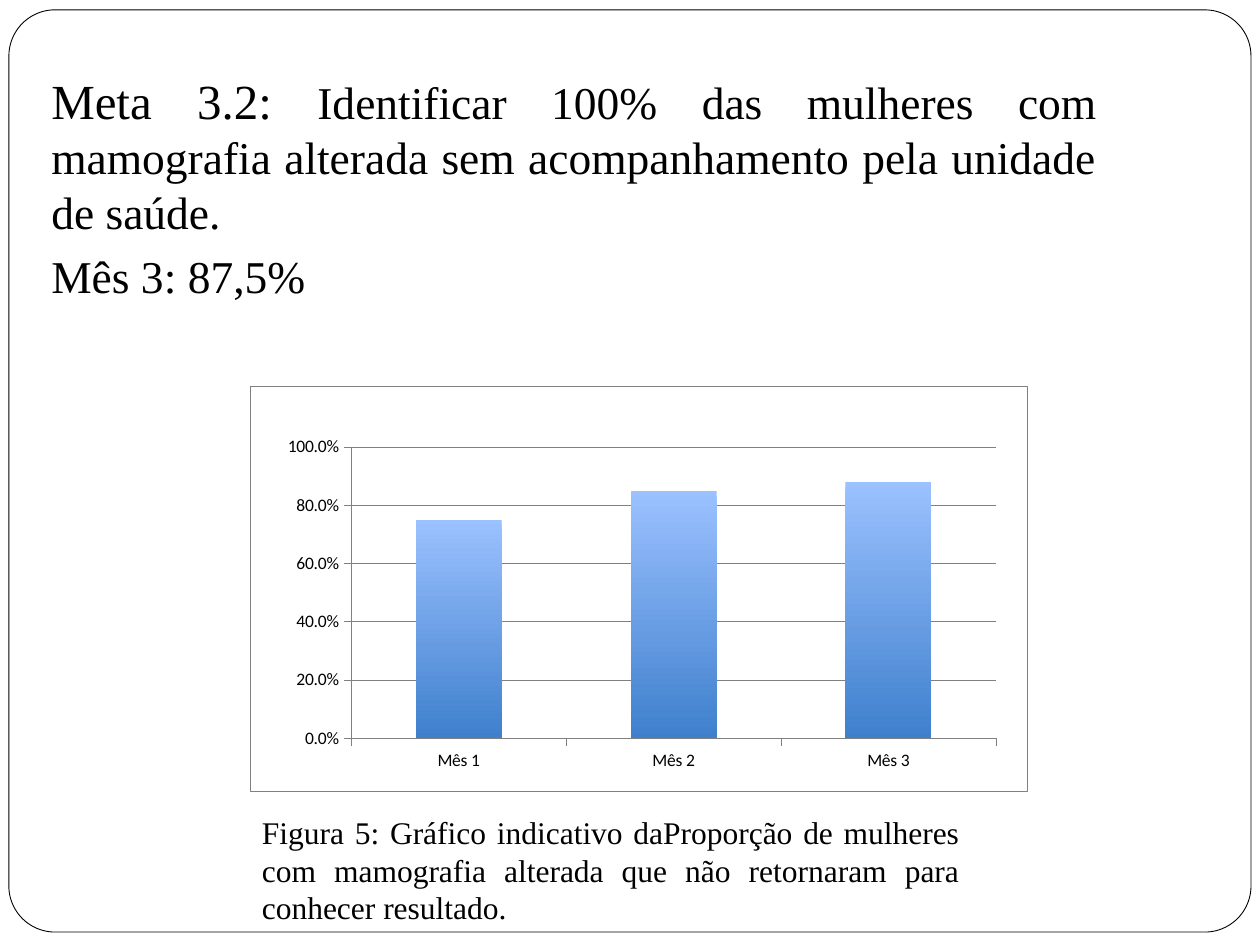
from lxml import etree
from pptx import Presentation
from pptx import util as u
from pptx.chart.data import CategoryChartData
from pptx.dml.color import RGBColor
from pptx.enum import chart as charts, shapes, text
from pptx.oxml import parse_xml
from pptx.oxml.ns import nsdecls, qn

SERIF = "Times New Roman"
BLACK, WHITE, GRAY = "000000", "FFFFFF", "808080"


def color(value):
    """Turn a hex string into a colour."""
    return RGBColor.from_string(value)


def place(box, left, top, width, height):
    """Set position and size in centimetres."""
    box.left, box.top = u.Cm(left), u.Cm(top)
    box.width, box.height = u.Cm(width), u.Cm(height)


def style_line(line, value, width):
    """Give a line its colour and width in points."""
    line.color.rgb = color(value)
    line.width = u.Pt(width)


def add_span(para, words, size, font=SERIF, value=BLACK):
    """Append a formatted run to a paragraph."""
    span = para.add_run()
    span.text = words
    span.font.size = u.Pt(size)
    span.font.name = font
    span.font.color.rgb = color(value)


def justify(para, before=0):
    """Justify a paragraph without bullet or indent."""
    para.alignment = text.PP_ALIGN.JUSTIFY
    para.space_before = u.Pt(before)
    properties = para._p.get_or_add_pPr()
    properties.set("marL", "0")
    properties.set("indent", "0")
    etree.SubElement(properties, qn("a:buNone"))


def add_frame(page, body):
    """Draw the rounded page frame behind the body."""
    frame = page.shapes.add_shape(shapes.MSO_SHAPE.ROUNDED_RECTANGLE, 0, 0, 0, 0)
    place(frame, 0.18, 0.2, 25.04, 18.59)
    frame.adjustments[0] = 0.05
    frame.shadow.inherit = False
    frame.fill.solid()
    frame.fill.fore_color.rgb = color(WHITE)
    style_line(frame.line, BLACK, 0.5)
    body.element.addprevious(frame.element)


def fill_body(body):
    """Write the goal and its result in the body placeholder."""
    place(body, 0.78, 1.29, 21.6, 12.7)
    goal = body.text_frame.paragraphs[0]
    add_span(goal, "Meta 3.2: ", 28)
    add_span(goal, "Identificar 100% das mulheres com mamografia alterada "
             "sem acompanhamento pela unidade de saúde. ", 26)
    result = body.text_frame.add_paragraph()
    add_span(result, "Mês 3: 87,5%", 26)
    for para in (goal, result):
        justify(para, before=5.8)


def add_caption(page, words):
    """Add the figure caption."""
    box = page.shapes.add_textbox(0, 0, 0, 0)
    place(box, 5.03, 16.26, 14.57, 2.57)
    box.text_frame.word_wrap = True
    para = box.text_frame.paragraphs[0]
    add_span(para, words, 18)
    justify(para)


def area_format(border=None):
    """Return white area properties with an optional hairline border."""
    line = (f'<a:ln w="3175"><a:solidFill><a:srgbClr val="{border}"/></a:solidFill></a:ln>'
            if border else "<a:ln><a:noFill/></a:ln>")
    return parse_xml(f'<c:spPr {nsdecls("c", "a")}><a:solidFill><a:srgbClr val="{WHITE}"/>'
                     f'</a:solidFill>{line}</c:spPr>')


def set_plot_layout(area, **sizes):
    """Fix the inner plot area as fractions of the chart."""
    for old in area.findall(qn("c:layout")):
        area.remove(old)
    values = "".join(f'<c:{key} val="{value}"/>' for key, value in sizes.items())
    area.insert(0, parse_xml(
        f'<c:layout {nsdecls("c")}><c:manualLayout><c:layoutTarget val="inner"/>'
        f'<c:xMode val="edge"/><c:yMode val="edge"/>{values}</c:manualLayout></c:layout>'))


def style_axes(chart):
    """Format both axes and the gridlines."""
    for axis in (chart.category_axis, chart.value_axis):
        axis.major_tick_mark = charts.XL_TICK_MARK.OUTSIDE
        axis.minor_tick_mark = charts.XL_TICK_MARK.NONE
        style_line(axis.format.line, GRAY, 0.25)
    scale = chart.value_axis
    scale.minimum_scale, scale.maximum_scale, scale.major_unit = 0, 1, 0.2
    scale.has_major_gridlines = True
    style_line(scale.major_gridlines.format.line, GRAY, 0.25)
    scale.tick_labels.number_format = "0.0%"
    scale.tick_labels.number_format_is_linked = False


def add_column_chart(page, categories, values):
    """Add the monthly column chart."""
    data = CategoryChartData(number_format="0.0%")
    data.categories = categories
    data.add_series("Series 1", values)
    holder = page.shapes.add_chart(charts.XL_CHART_TYPE.COLUMN_CLUSTERED,
                                   u.Cm(5.04), u.Cm(7.78), u.Cm(15.67), u.Cm(8.17), data)
    chart = holder.chart
    chart.has_title = chart.has_legend = False
    chart.font.name, chart.font.size = "Calibri", u.Pt(10)
    chart.font.color.rgb = color(BLACK)
    style_axes(chart)
    plot = chart.plots[0]
    plot.gap_width, plot.vary_by_categories = 150, False
    fill = plot.series[0].format.fill
    fill.gradient()
    fill.gradient_angle = 270
    for stop, value in zip(fill.gradient_stops, ("9BC1FF", "3F80CD")):
        stop.color.rgb = color(value)
    root = chart.element.find(qn("c:chart"))
    area = root.find(qn("c:plotArea"))
    set_plot_layout(area, x=0.13, y=0.15, w=0.83, h=0.72)
    area.append(area_format())
    root.addnext(area_format(GRAY))


def main():
    """Build and save the deck."""
    deck = Presentation()
    deck.slide_width, deck.slide_height = u.Cm(25.4), u.Cm(19.05)
    page = deck.slides.add_slide(deck.slide_layouts[1])
    title, body = page.placeholders
    title.element.getparent().remove(title.element)
    add_frame(page, body)
    fill_body(body)
    add_caption(page, "Figura 5: Gráfico indicativo daProporção de mulheres com mamografia "
                "alterada que não retornaram para conhecer resultado.")
    add_column_chart(page, ("Mês 1", "Mês 2", "Mês 3"), (0.75, 0.85, 0.88))
    deck.save("out.pptx")


if __name__ == "__main__":
    main()
